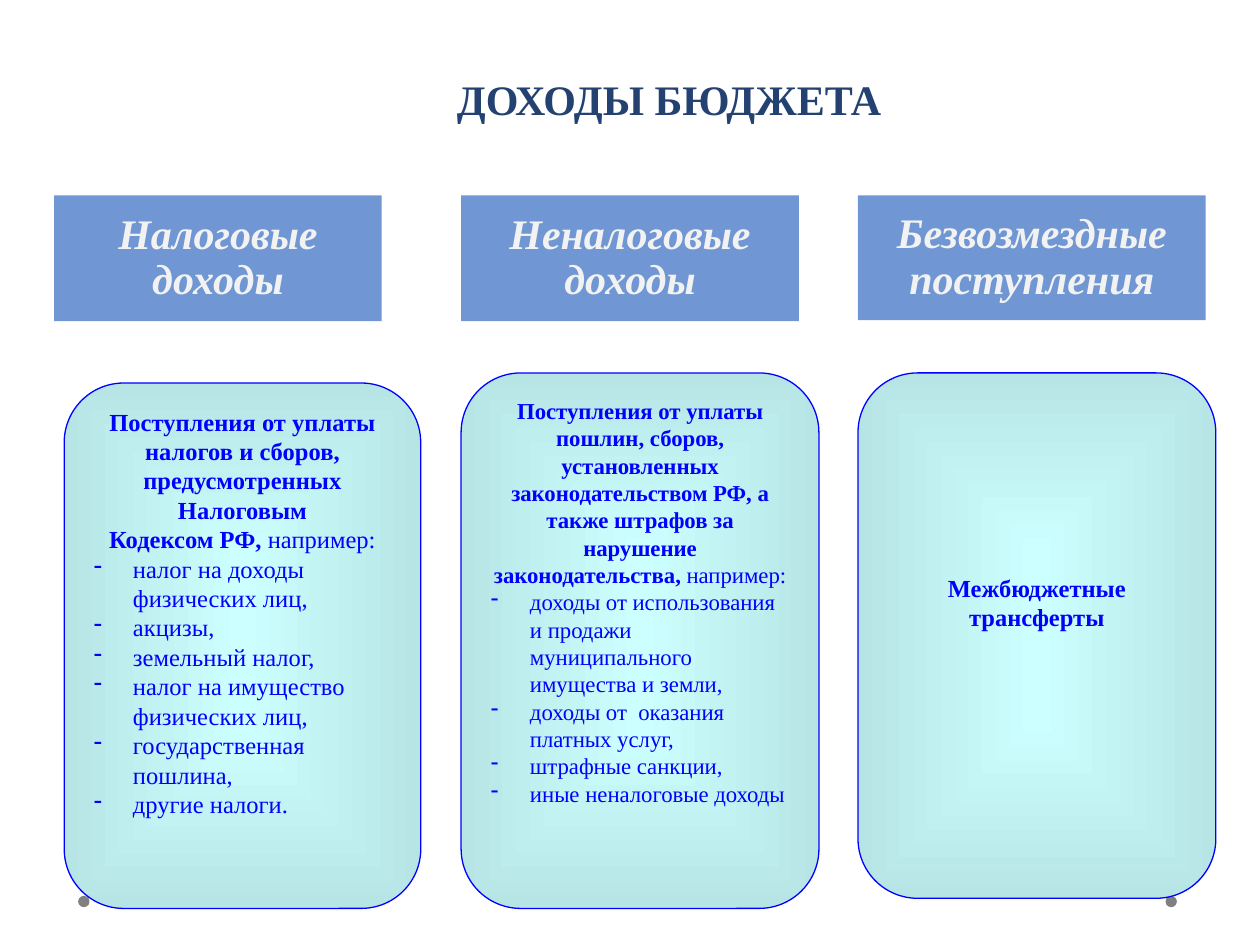
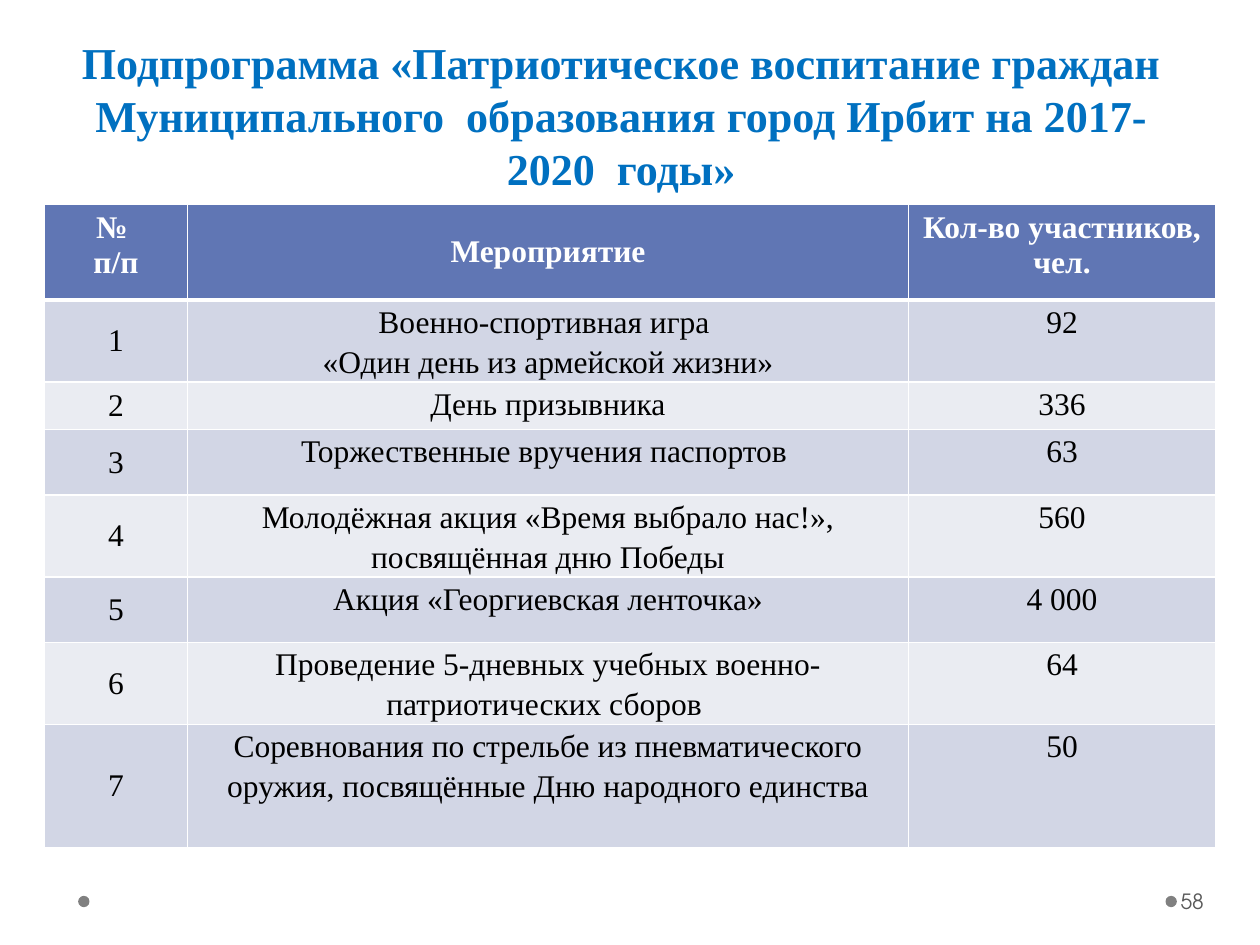
from dataclasses import dataclass, field

from lxml import etree
from pptx import Presentation
from pptx.dml.color import RGBColor
from pptx.enum.shapes import MSO_SHAPE
from pptx.enum.text import MSO_ANCHOR, MSO_AUTO_SIZE, PP_ALIGN
from pptx.oxml.ns import qn
from pptx.util import Emu, Inches, Pt

CENTER, LEFT = PP_ALIGN.CENTER, PP_ALIGN.LEFT
TOP, MIDDLE, BOTTOM = MSO_ANCHOR.TOP, MSO_ANCHOR.MIDDLE, MSO_ANCHOR.BOTTOM
FIXED = MSO_AUTO_SIZE.NONE
RECTANGLE, ROUNDED, OVAL = MSO_SHAPE.RECTANGLE, MSO_SHAPE.ROUNDED_RECTANGLE, MSO_SHAPE.OVAL
SLIDE_WIDTH, SLIDE_HEIGHT = Inches(10), Inches(7.5)
COLUMN, ROW = SLIDE_WIDTH // 100, SLIDE_HEIGHT // 75
TITLE_ONLY = 5


@dataclass(frozen=True)
class Theme:
    serif: str = "Times New Roman"
    sans: str = "TeX Gyre Adventor"
    navy: str = "234271"
    azure: str = "0070C0"
    heading_fill: str = "7097D3"
    heading_text: str = "F2F2F2"
    card_ink: str = "0000FF"
    card_center: str = "CCFFFF"
    card_edge: str = "B7E5E5"
    dot: str = "808080"
    page_number: str = "595959"
    table_head: str = "6076B4"
    table_bands: tuple[str, str] = ("D2D6E5", "EAECF2")
    white: str = "FFFFFF"
    black: str = "000000"
    heading_size: float = 24
    program_size: float = 25.2
    table_size: float = 18
    number_size: float = 12


THEME = Theme()


@dataclass(frozen=True)
class Box:
    column: float
    row: float
    columns: float
    rows: float

    def place(self) -> tuple[Emu, Emu, Emu, Emu]:
        return (Emu(round(self.column * COLUMN)), Emu(round(self.row * ROW)),
                Emu(round(self.columns * COLUMN)), Emu(round(self.rows * ROW)))


@dataclass(frozen=True)
class TextStyle:
    size: float
    color: str
    bold: bool = False
    italic: bool = False
    face: str = THEME.serif


@dataclass(frozen=True)
class Income:
    heading: str
    heading_box: Box
    card_box: Box
    size: float
    lead: list[str]
    example: str = ""
    items: list[str] = field(default_factory=list)
    top_margin: float = 0.05


INCOMES = [
    Income("Налоговые доходы", Box(4.3, 15.5, 26, 10), Box(5.1, 30.4, 28.3, 41.7), 14,
           ["Поступления от уплаты", "налогов и сборов,", "предусмотренных Налоговым",
            "Кодексом РФ, "], "например:",
           ["налог на доходы физических лиц,", "акцизы,", "земельный налог,",
            "налог на имущество физических лиц,", "государственная пошлина,",
            "другие налоги."]),
    Income("Неналоговые доходы", Box(36.6, 15.5, 26.8, 10), Box(36.6, 29.6, 28.4, 42.5), 13,
           ["Поступления от уплаты пошлин, сборов, установленных законодательством РФ, "
            "а также штрафов за нарушение законодательства, "], "например:",
           ["доходы от использования и продажи муниципального имущества и земли,",
            "доходы от  оказания платных услуг,", "штрафные санкции,",
            "иные неналоговые доходы"]),
    Income("Безвозмездные поступления", Box(68.1, 15.5, 27.6, 9.9),
           Box(68.1, 29.6, 28.4, 41.7), 14, ["Межбюджетные трансферты"], top_margin=1.45),
]

TABLE_BOX = Box(3.5, 16.2, 93, 51.1)
TABLE_COLUMNS = [11.4, 57.2, 24.4]
TABLE_ROWS = [7.6, 6.5, 3.8, 5.2, 6.5, 5.2, 6.5, 9.8]
TABLE_HEAD = ["№ \nп/п", "Мероприятие", "Кол-во участников, чел."]
EVENTS = [
    ("Военно-спортивная игра \n«Один день из армейской жизни»", "92"),
    ("День призывника", "336"),
    ("Торжественные вручения паспортов ", "63"),
    ("Молодёжная акция «Время выбрало нас!», посвящённая дню Победы", "560"),
    ("Акция «Георгиевская ленточка»", "4 000"),
    ("Проведение 5-дневных учебных военно-патриотических сборов ", "64"),
    ("Соревнования по стрельбе из пневматического оружия, посвящённые Дню "
     "народного единства", "50"),
]


def apply(target, formats: dict) -> None:
    for name, value in formats.items():
        setattr(target, name, value)


def rgb(color: str) -> RGBColor:
    return RGBColor.from_string(color)


def add_run(paragraph, text: str, style: TextStyle) -> None:
    run = paragraph.add_run()
    run.text = text
    apply(run.font, {"name": style.face, "size": Pt(style.size),
                     "bold": style.bold, "italic": style.italic})
    run.font.color.rgb = rgb(style.color)


def next_paragraph(frame, align=CENTER, spacing: float = 1.0):
    first = frame.paragraphs[0]
    paragraph = frame.add_paragraph() if first.runs else first
    apply(paragraph, {"alignment": align, "line_spacing": spacing})
    return paragraph


def add_shape(slide, kind, box: Box, fill: str = ""):
    shape = slide.shapes.add_shape(kind, *box.place())
    shape.shadow.inherit = False
    shape.line.fill.background()
    if fill:
        shape.fill.solid()
        shape.fill.fore_color.rgb = rgb(fill)
    return shape


def start_slide(deck, title: str, box: Box, style: TextStyle, anchor):
    slide = deck.slides.add_slide(deck.slide_layouts[TITLE_ONLY])
    heading = slide.shapes.title
    apply(heading, dict(zip(("left", "top", "width", "height"), box.place())))
    apply(heading.text_frame, {"word_wrap": True, "auto_size": FIXED,
                               "vertical_anchor": anchor})
    add_run(next_paragraph(heading.text_frame), title, style)
    for column in (6.2, 92.5):
        add_shape(slide, OVAL, Box(column, 71.1, 0.9, 0.9), THEME.dot)
    return slide


def add_heading(slide, income: Income) -> None:
    frame = add_shape(slide, RECTANGLE, income.heading_box, THEME.heading_fill).text_frame
    margin = Inches(0.06)
    apply(frame, {"word_wrap": True, "vertical_anchor": MIDDLE,
                  "margin_left": margin, "margin_right": margin,
                  "margin_top": margin, "margin_bottom": margin})
    add_run(next_paragraph(frame, spacing=0.9), income.heading,
            TextStyle(THEME.heading_size, THEME.heading_text, True, True))


def fill_from_center(shape) -> None:
    shape.fill.gradient()
    for stop, color in zip(shape.fill.gradient_stops, (THEME.card_center, THEME.card_edge)):
        stop.color.rgb = rgb(color)
    gradient = shape.element.spPr.find(qn("a:gradFill"))
    gradient.remove(gradient.find(qn("a:lin")))
    route = etree.SubElement(gradient, qn("a:path"), {"path": "rect"})
    etree.SubElement(route, qn("a:fillToRect"), dict.fromkeys("ltrb", "50000"))


def add_card(slide, income: Income) -> None:
    card = add_shape(slide, ROUNDED, income.card_box)
    fill_from_center(card)
    card.line.color.rgb = rgb(THEME.card_ink)
    card.line.width = Pt(0.75)
    frame = card.text_frame
    apply(frame, {"word_wrap": True, "vertical_anchor": TOP,
                  "margin_top": Inches(income.top_margin)})
    strong = TextStyle(income.size, THEME.card_ink, True)
    plain = TextStyle(income.size, THEME.card_ink)
    for line in income.lead:
        lead = next_paragraph(frame)
        add_run(lead, line, strong)
    if income.example:
        add_run(lead, income.example, plain)
    indent = Inches(0.31)
    for item in income.items:
        entry = next_paragraph(frame, LEFT)
        properties = entry._p.get_or_add_pPr()
        properties.set("marL", str(indent))
        properties.set("indent", str(-indent))
        etree.SubElement(properties, qn("a:buChar"), {"char": "-"})
        add_run(entry, item, plain)


def add_borders(cell, bottom: float) -> None:
    properties = cell._tc.get_or_add_tcPr()
    for side, width in {"L": 1, "R": 1, "T": 1, "B": bottom}.items():
        line = etree.SubElement(properties, qn(f"a:ln{side}"), {"w": str(Pt(width))})
        solid = etree.SubElement(line, qn("a:solidFill"))
        etree.SubElement(solid, qn("a:srgbClr"), {"val": THEME.white})


def fill_cell(cell, text: str, row: int, column: int) -> None:
    is_head = row == 0
    is_entry = not is_head and column > 0
    add_borders(cell, 3 if is_head else 1)
    cell.fill.solid()
    cell.fill.fore_color.rgb = rgb(
        THEME.table_head if is_head else THEME.table_bands[(row - 1) % 2])
    centered = column == 1 if is_head else column == 0
    cell.vertical_anchor = MIDDLE if centered else TOP
    if is_entry:
        apply(cell, {"margin_left": Inches(0.07), "margin_right": Inches(0.07),
                     "margin_top": 0, "margin_bottom": 0})
    style = TextStyle(THEME.table_size, THEME.white if is_head else THEME.black, is_head)
    for line in text.split("\n"):
        add_run(next_paragraph(cell.text_frame, spacing=1.15 if is_entry else 1.0),
                line, style)


def add_events(slide) -> None:
    rows = [TABLE_HEAD] + [[str(number), *event] for number, event in enumerate(EVENTS, 1)]
    table = slide.shapes.add_table(len(rows), len(TABLE_HEAD), *TABLE_BOX.place()).table
    for column, columns in zip(table.columns, TABLE_COLUMNS):
        column.width = Emu(round(columns * COLUMN))
    for row, height in zip(table.rows, TABLE_ROWS):
        row.height = Emu(round(height * ROW))
    for row, texts in enumerate(rows):
        for column, text in enumerate(texts):
            fill_cell(table.cell(row, column), text, row, column)


def add_page_number(slide, number: str) -> None:
    frame = slide.shapes.add_textbox(*Box(93.4, 69.5, 6.1, 4).place()).text_frame
    apply(frame, {"word_wrap": True, "vertical_anchor": MIDDLE,
                  "margin_left": Inches(0.03), "margin_right": Inches(0.05)})
    add_run(next_paragraph(frame, LEFT), number,
            TextStyle(THEME.number_size, THEME.page_number, face=THEME.sans))


def main() -> None:
    deck = Presentation()
    apply(deck, {"slide_width": SLIDE_WIDTH, "slide_height": SLIDE_HEIGHT})

    revenue = start_slide(deck, "ДОХОДЫ БЮДЖЕТА", Box(16.9, 5.3, 72.4, 5.1),
                          TextStyle(THEME.heading_size, THEME.navy, True), TOP)
    for income in INCOMES:
        add_heading(revenue, income)
        add_card(revenue, income)

    program = start_slide(
        deck, "Подпрограмма «Патриотическое воспитание граждан Муниципального  "
        "образования город Ирбит на 2017-2020  годы»", Box(4.3, 1.3, 90, 14.6),
        TextStyle(THEME.program_size, THEME.azure, True), BOTTOM)
    add_events(program)
    add_page_number(program, "58")
    deck.save("out.pptx")


if __name__ == "__main__":
    main()
